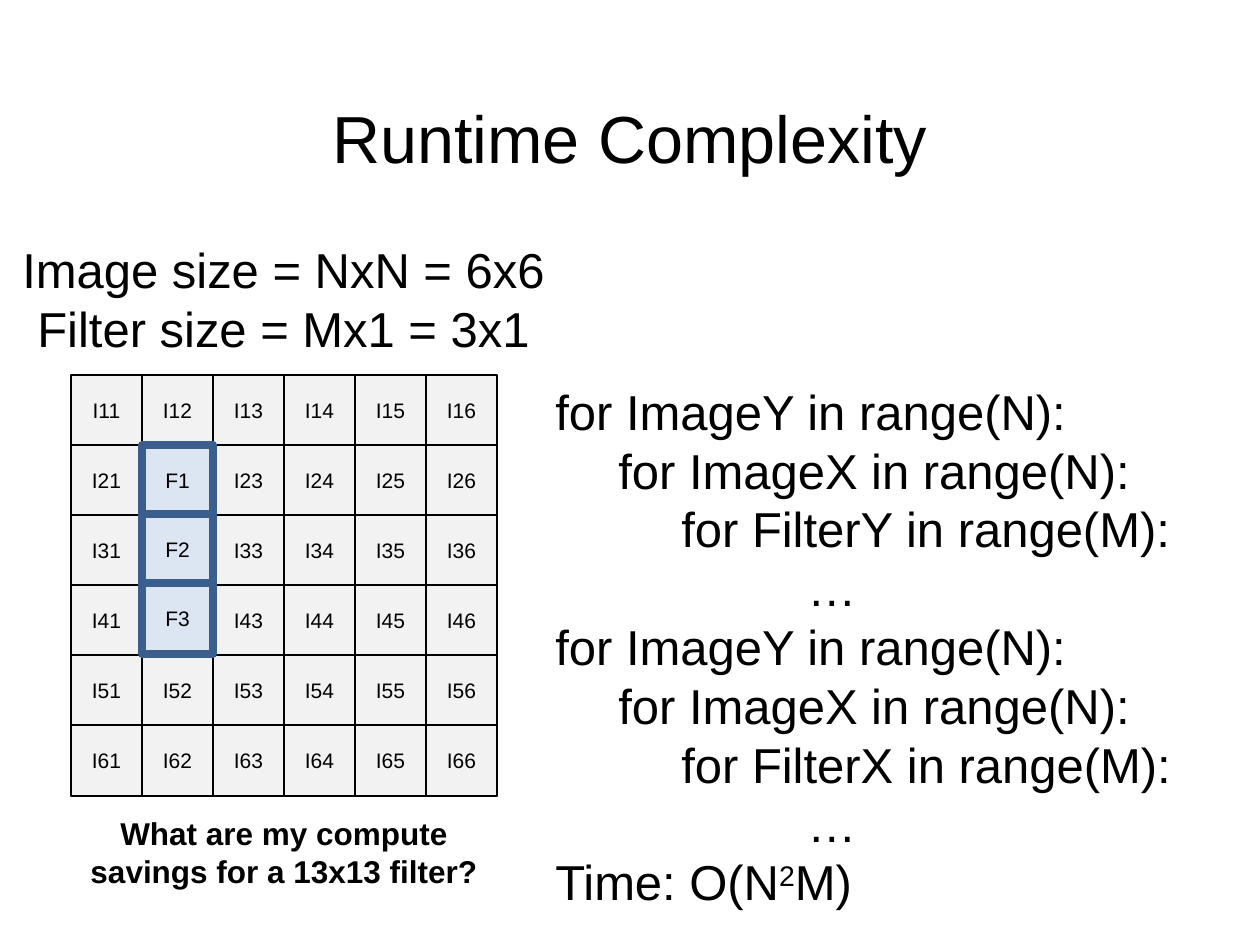
from lxml import etree
from pptx import Presentation
from pptx import util as u
from pptx.dml.color import RGBColor
from pptx.enum import shapes, text

BLACK = RGBColor(0x00, 0x00, 0x00)
GREY = RGBColor(0xF2, 0xF2, 0xF2)
PALE = RGBColor(0xDC, 0xE6, 0xF2)
BLUE = RGBColor(0x3A, 0x5F, 0x8C)
LEFT, MID = text.PP_ALIGN.LEFT, text.PP_ALIGN.CENTER

TITLE = "Runtime Complexity"
SIZES = ["Image size = NxN = 6x6", "Filter size = Mx1 = 3x1"]
ASK = ["What are my compute savings for a 13x13 filter?"]
LOOPS = [(0, "for ImageY in range(N):"), (1, "for ImageX in range(N):"),
         (2, "for Filter{} in range(M):"), (4, "…")]
CODE = ["\t" * tabs + line.format(axis) for axis in "YX" for tabs, line in LOOPS]
COST = [("Time: O(N", None), ("2", "30000"), ("M)", None)]

COUNT, SIDE = 6, 71
GRID_X, GRID_Y, STEP_Y = 71, 375, 70
FILTER = ["F1", "F2", "F3"]
FILTER_COL, FILTER_ROW, FILTER_STEP = 1, 1, 69
HIDDEN = ["I22", "I32"]


def px(n):
    return u.Emu(round(n * 914400 / 126))


def style(obj, **vals):
    for key, val in vals.items():
        setattr(obj, key, val)


def place(shape, x, y, w, h):
    style(shape, left=px(x), top=px(y), width=px(w), height=px(h))


def write(par, runs, size, align, bold=False):
    par.alignment = align
    for words, raised in runs:
        run = par.add_run()
        run.text = words
        style(run.font, name="Arial", size=u.Pt(size), bold=bold)
        run.font.color.rgb = BLACK
        if raised:
            run.font._element.set("baseline", raised)


def label(slide, box, lines, size, align, bold=False):
    frame = slide.shapes.add_textbox(*map(px, box)).text_frame
    frame.word_wrap = True
    for i, line in enumerate(lines):
        par = frame.add_paragraph() if i else frame.paragraphs[0]
        runs = [(line, None)] if isinstance(line, str) else line
        write(par, runs, size, align, bold)


def cell(slide, x, y, name, fill, edge, width):
    box = slide.shapes.add_shape(shapes.MSO_SHAPE.RECTANGLE,
                                 *map(px, (x, y, SIDE, SIDE)))
    box.shadow.inherit = False
    box.fill.solid()
    box.fill.fore_color.rgb = fill
    box.line.color.rgb = edge
    box.line.width = u.Pt(width)
    frame = box.text_frame
    style(frame, vertical_anchor=text.MSO_ANCHOR.MIDDLE, word_wrap=True)
    write(frame.paragraphs[0], [(name, None)], 12, MID)


def main():
    prs = Presentation()
    style(prs, slide_width=u.Inches(10), slide_height=u.Inches(7.5))
    slide = prs.slides.add_slide(prs.slide_layouts[5])

    title = slide.shapes.title
    place(title, 87, 50, 1086, 183)
    title.text_frame.vertical_anchor = text.MSO_ANCHOR.MIDDLE
    head = title.text_frame.paragraphs[0]
    head.line_spacing = 0.9
    write(head, [(TITLE, None)], 38, MID)

    label(slide, (543, 375, 731, 547), CODE + [COST], 28, LEFT)
    for row in range(COUNT):
        for col in range(COUNT):
            name = f"I{row + 1}{col + 1}"
            if name not in HIDDEN:
                cell(slide, GRID_X + col * SIDE, GRID_Y + row * STEP_Y,
                     name, GREY, BLACK, 1)
    label(slide, (0, 233, 567, 131), SIZES, 28, MID)
    for i, name in enumerate(FILTER):
        cell(slide, GRID_X + FILTER_COL * SIDE,
             GRID_Y + FILTER_ROW * STEP_Y + i * FILTER_STEP,
             name, PALE, BLUE, 4.5)
    label(slide, (71, 808, 426, 89), ASK, 18, MID, True)
    prs.save("out.pptx")


if __name__ == "__main__":
    main()
